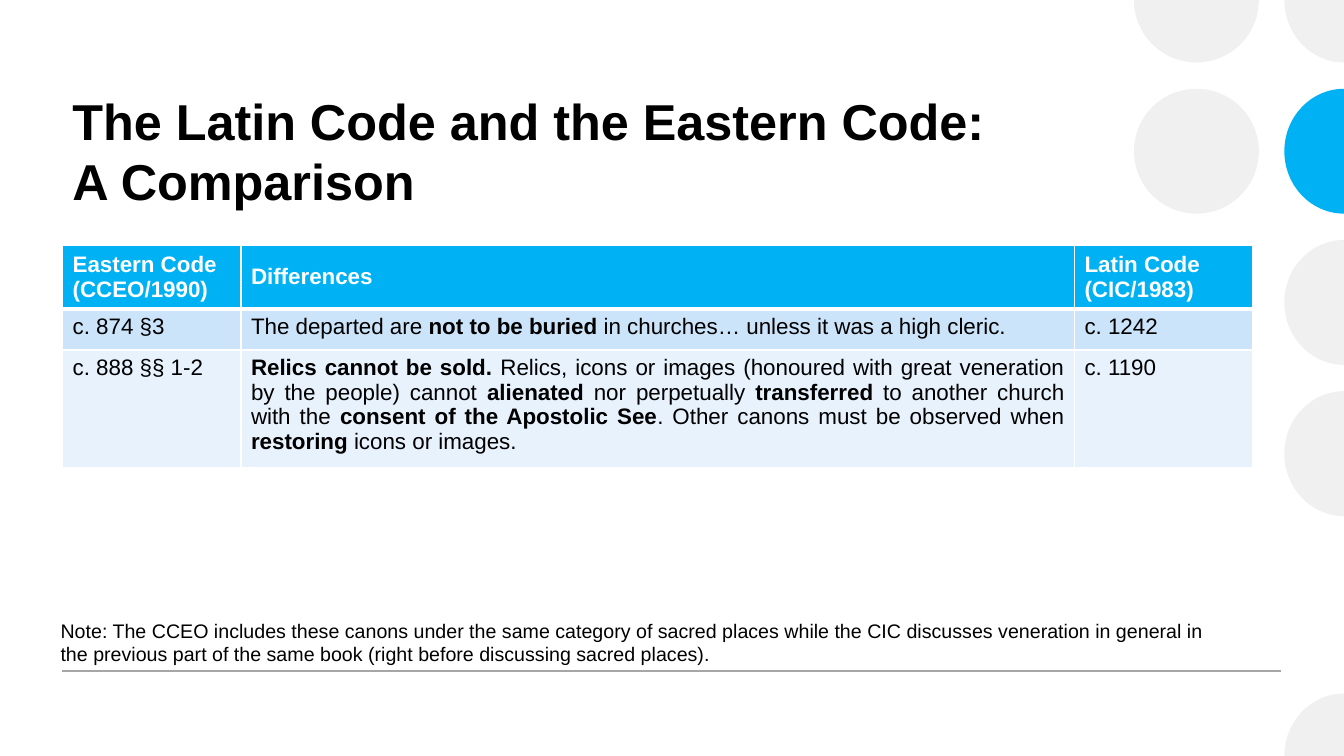
from math import cos, pi, sin

from lxml.etree import SubElement
from pptx import Presentation
from pptx.dml.color import RGBColor
from pptx.enum.shapes import MSO_CONNECTOR, MSO_SHAPE
from pptx.enum.text import MSO_ANCHOR as ANCHOR, PP_ALIGN as ALIGN
from pptx.oxml.ns import qn
from pptx.util import Pt

W, H = 960, 540
FONT = "Arial"
BEZIER = 0.5523  # handle length of a quarter circle of radius 1
COLORS = {
    "black": "000000", "white": "FFFFFF", "gray": "EFF0EF", "blue": "00B2F3",
    "rule": "A6A6A6", "band1": "CCE4FA", "band2": "E7F2FD",
}

TITLE = "The Latin Code and the Eastern Code:\vA Comparison"
HEADER = ["Eastern Code\n(CCEO/1990)", "Differences", "Latin Code\n(CIC/1983)"]
BODY = [
    ["c. 874 §3",
     "The departed are **not to be buried **in churches… unless it was a high cleric.",
     "c. 1242"],
    ["c. 888 §§ 1-2",
     "**Relics cannot be sold.** Relics, icons or images (honoured with great "
     "veneration by the people) cannot **alienated** nor perpetually **transferred** "
     "to another church with the **consent of the Apostolic See**. Other canons must "
     "be observed when **restoring** icons or images.",
     "c. 1190"],
]
NOTE = ("Note: The CCEO includes these canons under the same category of sacred places "
        "while the CIC discusses veneration in general in the previous part of the same "
        "book (right before discussing sacred places).")


def rgb(name):
    return RGBColor.from_string(COLORS[name])


def write(tf, text, size, color="black", bold=False, align=ALIGN.LEFT):
    """Fill a text frame; newlines split paragraphs, ** toggles bold, \\v breaks a line."""
    for i, line in enumerate(text.split("\n")):
        p = tf.paragraphs[0] if i == 0 else tf.add_paragraph()
        p.alignment = align
        for j, part in enumerate(line.split("**")):
            for k, piece in enumerate(part.split("\v")):
                if k:
                    p.add_line_break()
                if not piece:
                    continue
                r = p.add_run()
                r.text = piece
                fmt = {"name": FONT, "size": Pt(size), "bold": bold or j % 2 == 1}
                for key, value in fmt.items():
                    setattr(r.font, key, value)
                r.font.color.rgb = rgb(color)


def add_text(s, box, text, size, **fmt):
    tf = s.shapes.add_textbox(*map(Pt, box)).text_frame
    tf.word_wrap = True
    tf.vertical_anchor = ANCHOR.TOP
    write(tf, text, size, **fmt)


def paint(sp, color):
    sp.shadow.inherit = False
    sp.fill.solid()
    sp.fill.fore_color.rgb = rgb(color)
    sp.line.fill.background()


def add_arc(s, cx, cy, rx, ry, quarters, color):
    """Draw the given neighbouring quarters (0 is lower right, clockwise) of an ellipse."""
    def at(x, y):
        return Pt(cx + rx * x), Pt(cy + ry * y)

    points = []
    for quarter in quarters:
        a = quarter * pi / 2
        x, y, u, v = cos(a), sin(a), -sin(a), cos(a)
        points += [at(x + BEZIER * u, y + BEZIER * v),
                   at(u + BEZIER * x, v + BEZIER * y), at(u, v)]
    start = quarters[0] * pi / 2
    outline = s.shapes.build_freeform(*at(cos(start), sin(start)), scale=1.0)
    corner = [at(0, 0)] if len(quarters) == 1 else []
    outline.add_line_segments(points + corner, close=True)
    sp = outline.convert_to_shape()
    lines = list(sp._element.iter(qn("a:lnTo")))
    for i in range(0, 3 * len(quarters), 3):
        curve = lines[i].makeelement(qn("a:cubicBezTo"))
        lines[i].addprevious(curve)
        for line in lines[i:i + 3]:
            curve.append(line[0])
            line.getparent().remove(line)
    paint(sp, color)


def add_dots(s, left, right, pitch=108, radius=44.6):
    """Place the dot grid: a column centred at left, and one cut by the edge at right."""
    sp = s.shapes.add_shape(MSO_SHAPE.OVAL, Pt(left - radius), Pt(pitch - radius),
                            Pt(2 * radius), Pt(2 * radius))
    paint(sp, "gray")
    add_arc(s, left, 0, radius, radius, (0, 1), "gray")
    visible = {0: (1,), 1: (1, 2), 2: (1, 2), 3: (1, 2), 5: (2,)}
    for row, quarters in visible.items():
        add_arc(s, right, row * pitch, radius - 2, radius, quarters,
                "blue" if row == 1 else "gray")


def add_rule(s, left, y, width):
    line = s.shapes.add_connector(MSO_CONNECTOR.STRAIGHT, Pt(left), Pt(y),
                                  Pt(left + width), Pt(y))
    line.line.color.rgb = rgb("rule")
    line.line.width = Pt(1)
    SubElement(line._element.spPr, qn("a:effectLst"))


def set_borders(cell, widths):
    tc_pr = cell._tc.get_or_add_tcPr()
    for side, width in widths.items():
        ln = SubElement(tc_pr, qn(f"a:ln{side}"), w=str(Pt(width)))
        fill = SubElement(ln, qn("a:solidFill"))
        SubElement(fill, qn("a:srgbClr"), val=COLORS["white"])


def add_comparison(s, left, top, widths, row_height):
    """Add the table; rows grow from row_height to fit their text."""
    rows = [HEADER] + BODY
    table = s.shapes.add_table(len(rows), len(HEADER), Pt(left), Pt(top),
                               Pt(sum(widths)), Pt(row_height * len(rows))).table
    for column, width in zip(table.columns, widths):
        column.width = Pt(width)
    for i, (texts, fill) in enumerate(zip(rows, ("blue", "band1", "band2"))):
        table.rows[i].height = Pt(row_height)
        head = i == 0
        for j, text in enumerate(texts):
            cell = table.cell(i, j)
            set_borders(cell, {"L": 1, "R": 1, "T": 3 if i == 1 else 1,
                               "B": 3 if head else 1})
            cell.fill.solid()
            cell.fill.fore_color.rgb = rgb(fill)
            cell.vertical_anchor = ANCHOR.MIDDLE if head else ANCHOR.TOP
            justified = (i, j) == (2, 1)
            write(cell.text_frame, text, 16, "white" if head else "black", head,
                  ALIGN.JUSTIFY if justified else ALIGN.LEFT)


def main():
    prs = Presentation()
    prs.slide_width, prs.slide_height = Pt(W), Pt(H)
    s = prs.slides.add_slide(prs.slide_layouts[6])
    add_dots(s, 854.6, W)
    add_rule(s, 44.5, 479.3, 870.5)
    add_text(s, (44.6, 60.5, 684, 100), TITLE, 36, bold=True)
    add_comparison(s, 44.7, 175.2, (127.4, 595.4, 127.4), 29.2)
    add_text(s, (36.2, 438.5, 844, 41), NOTE, 14)
    prs.save("out.pptx")


if __name__ == "__main__":
    main()
